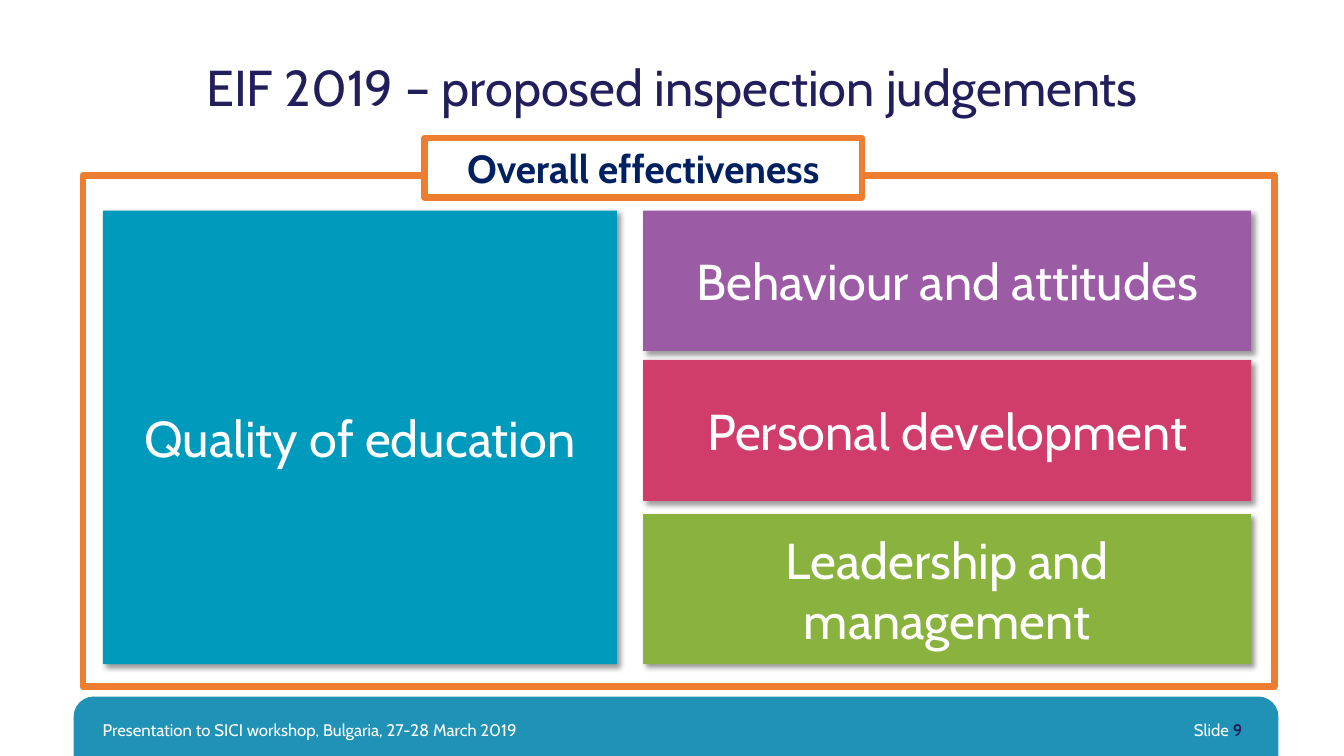
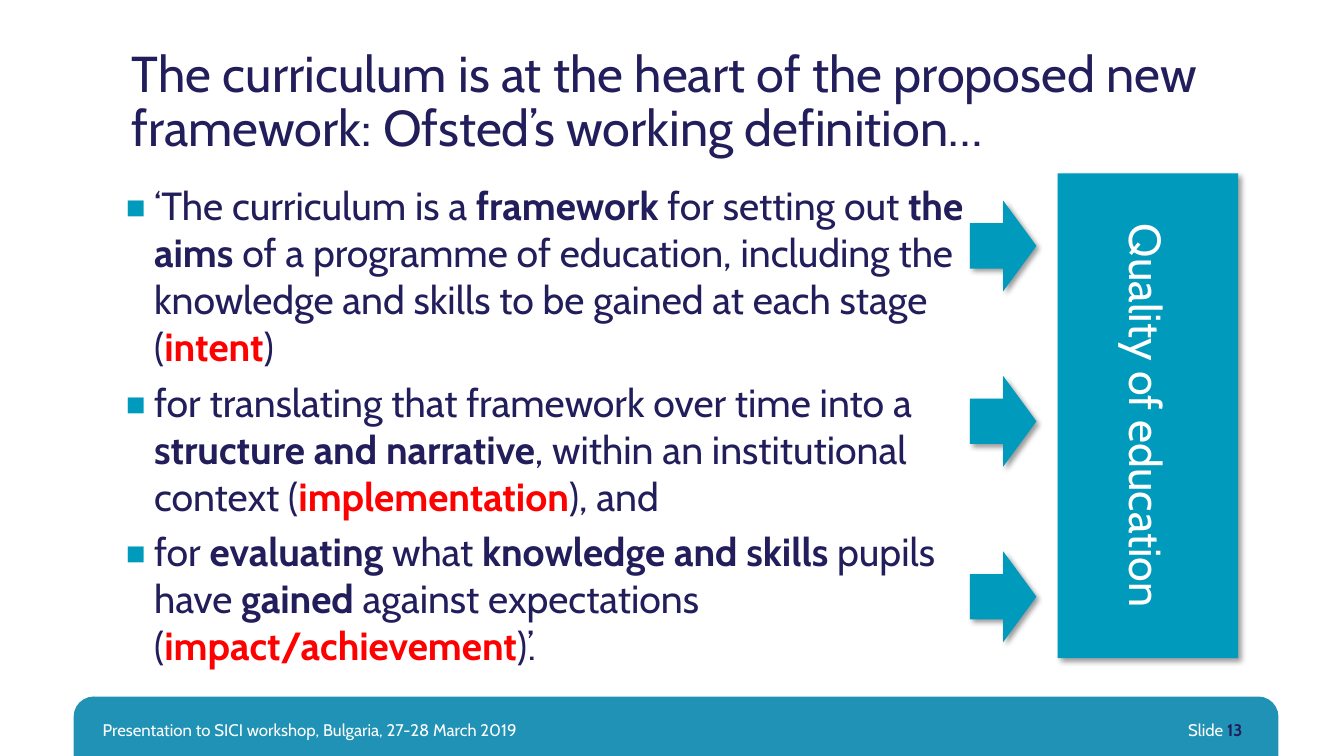
import pptx
import pptx.util
import pptx.dml.color
import pptx.enum.shapes
import pptx.enum.text
import pptx.oxml.ns
import lxml.etree

Inches = pptx.util.Inches
Pt = pptx.util.Pt
SHAPE = pptx.enum.shapes.MSO_SHAPE
ALIGN = pptx.enum.text.PP_ALIGN
ANCHOR = pptx.enum.text.MSO_ANCHOR
qn = pptx.oxml.ns.qn

FONT = "Cabin"
COLORS = {
    "white": "FFFFFF", "navy": "221E5B", "label": "002060", "band": "2092B6",
    "teal": "009ABC", "purple": "9B5BA5", "pink": "D13D6A", "green": "8AB23E",
    "orange": "ED7D31", "red": "FF0000",
}
RGB = {name: pptx.dml.color.RGBColor.from_string(code) for name, code in COLORS.items()}


def add_block(slide, kind, box, fill=None, line=None, shadow=False):
    block = slide.shapes.add_shape(kind, *map(Inches, box))
    block.shadow.inherit = False
    if fill:
        block.fill.solid()
        block.fill.fore_color.rgb = RGB[fill]
    else:
        block.fill.background()
    if line:
        block.line.color.rgb = RGB[line]
        block.line.width = Pt(4.5)
    else:
        block.line.fill.background()
    if shadow:
        effects = block._element.spPr.find(qn("a:effectLst"))
        outer = lxml.etree.SubElement(
            effects, qn("a:outerShdw"), blurRad=str(Pt(4)), dist=str(Pt(3)),
            dir="2700000", algn="tl", rotWithShape="0")
        black = lxml.etree.SubElement(outer, qn("a:srgbClr"), val="000000")
        lxml.etree.SubElement(black, qn("a:alpha"), val="40000")
    return block


def write(frame, paragraphs, size, align=ALIGN.LEFT, anchor=ANCHOR.MIDDLE):
    """Fill a text frame; each paragraph is a list of (text, colour, bold) runs."""
    frame.word_wrap = True
    frame.vertical_anchor = anchor
    for index, runs in enumerate(paragraphs):
        paragraph = frame.add_paragraph() if index else frame.paragraphs[0]
        paragraph.alignment = align
        for text, color, bold in runs:
            run = paragraph.add_run()
            run.text = text
            run.font.name = FONT
            run.font.size = Pt(size)
            run.font.bold = bold
            run.font.color.rgb = RGB[color]


presentation = pptx.Presentation()
presentation.slide_width = Inches(13.33)
presentation.slide_height = Inches(7.5)

# Shared title and footer
pages = [
    ("EIF 2019 – proposed inspection judgements",
     (1.32, 0.17, 10.69, 1.45), ALIGN.CENTER, "9"),
    ("The curriculum is at the heart of the proposed new framework: "
     "Ofsted’s working definition…",
     (1.21, 0.3, 11.06, 1.45), ALIGN.LEFT, "13"),
]
slides = []
for title, title_box, title_align, number in pages:
    slide = presentation.slides.add_slide(presentation.slide_layouts[6])
    slides.append(slide)
    band = add_block(slide, SHAPE.ROUND_2_SAME_RECTANGLE, (0.73, 6.91, 11.95, 0.59), "band")
    band.adjustments[0] = 0.34
    footer = slide.shapes.add_textbox(*map(Inches, (0.92, 7.04, 8.05, 0.4)))
    write(footer.text_frame,
          [[("Presentation to SICI workshop, Bulgaria, 27-28 March 2019", "white", False)]], 12)
    page_number = slide.shapes.add_textbox(*map(Inches, (11.25, 7.04, 1.17, 0.4)))
    write(page_number.text_frame,
          [[("Slide ", "white", False), (number, "navy", True)]], 12, ALIGN.RIGHT)
    heading = slide.shapes.add_textbox(*map(Inches, title_box))
    write(heading.text_frame, [[(title, "navy", False)]], 36, title_align)
    heading.text_frame.paragraphs[0].line_spacing = 0.9

judgements_slide, curriculum_slide = slides

# Inspection judgements
judgements = [
    ("Quality of education", "teal", (1.02, 2.09, 5.1, 4.5)),
    ("Behaviour and attitudes", "purple", (6.38, 2.09, 6.03, 1.39)),
    ("Personal development", "pink", (6.38, 3.57, 6.03, 1.4)),
    ("Leadership and management", "green", (6.38, 5.1, 6.03, 1.49)),
]
for judgement, color, box in judgements:
    block = add_block(judgements_slide, SHAPE.RECTANGLE, box, color, shadow=True)
    write(block.text_frame, [[(judgement, "white", False)]], 36, ALIGN.CENTER)
add_block(judgements_slide, SHAPE.RECTANGLE, (0.82, 1.74, 11.82, 5.07), line="orange")
overall = add_block(judgements_slide, SHAPE.RECTANGLE, (4.21, 1.37, 4.34, 0.59),
                    "white", "orange")
write(overall.text_frame, [[("Overall effectiveness", "label", True)]], 28, ALIGN.CENTER)

# Curriculum definition
definition = [
    [("‘The curriculum is a ", "navy", False), ("framework", "navy", True),
     (" for setting out ", "navy", False), ("the aims ", "navy", True),
     ("of a programme of education, including the knowledge and skills "
      "to be gained at each stage (", "navy", False),
     ("intent", "red", True), (")", "navy", False)],
    [("for translating that framework over time into a ", "navy", False),
     ("structure and narrative", "navy", True),
     (", within an institutional context (", "navy", False),
     ("implementation", "red", True), ("), and", "navy", False)],
    [("for ", "navy", False), ("evaluating", "navy", True), (" what ", "navy", False),
     ("knowledge and skills ", "navy", True), ("pupils have ", "navy", False),
     ("gained", "navy", True), (" against expectations (", "navy", False),
     ("impact/achievement", "red", True), (")’.", "navy", False)],
]
body = curriculum_slide.shapes.add_textbox(*map(Inches, (1.14, 1.75, 8.57, 5)))
write(body.text_frame, definition, 28, anchor=ANCHOR.TOP)
for paragraph in body.text_frame.paragraphs:
    paragraph.space_before = Pt(6)
    properties = paragraph._p.get_or_add_pPr()
    properties.set("marL", str(Inches(0.29)))
    properties.set("indent", str(Inches(-0.29)))
    bullet_color = lxml.etree.SubElement(properties, qn("a:buClr"))
    lxml.etree.SubElement(bullet_color, qn("a:srgbClr"), val=COLORS["teal"])
    lxml.etree.SubElement(properties, qn("a:buSzPct"), val="140000")
    lxml.etree.SubElement(properties, qn("a:buFont"), typeface=FONT)
    lxml.etree.SubElement(properties, qn("a:buChar"), char="▪")

quality = add_block(curriculum_slide, SHAPE.RECTANGLE, (8.98, 3.23, 4.81, 1.79),
                    "teal", shadow=True)
quality.rotation = 90
write(quality.text_frame, [[("Quality of education", "white", False)]], 32, ALIGN.CENTER)
for step in range(3):
    add_block(curriculum_slide, SHAPE.RIGHT_ARROW, (9.62, 1.99 + step * 1.74, 0.66, 0.9),
              "teal", shadow=True)

presentation.save("out.pptx")
